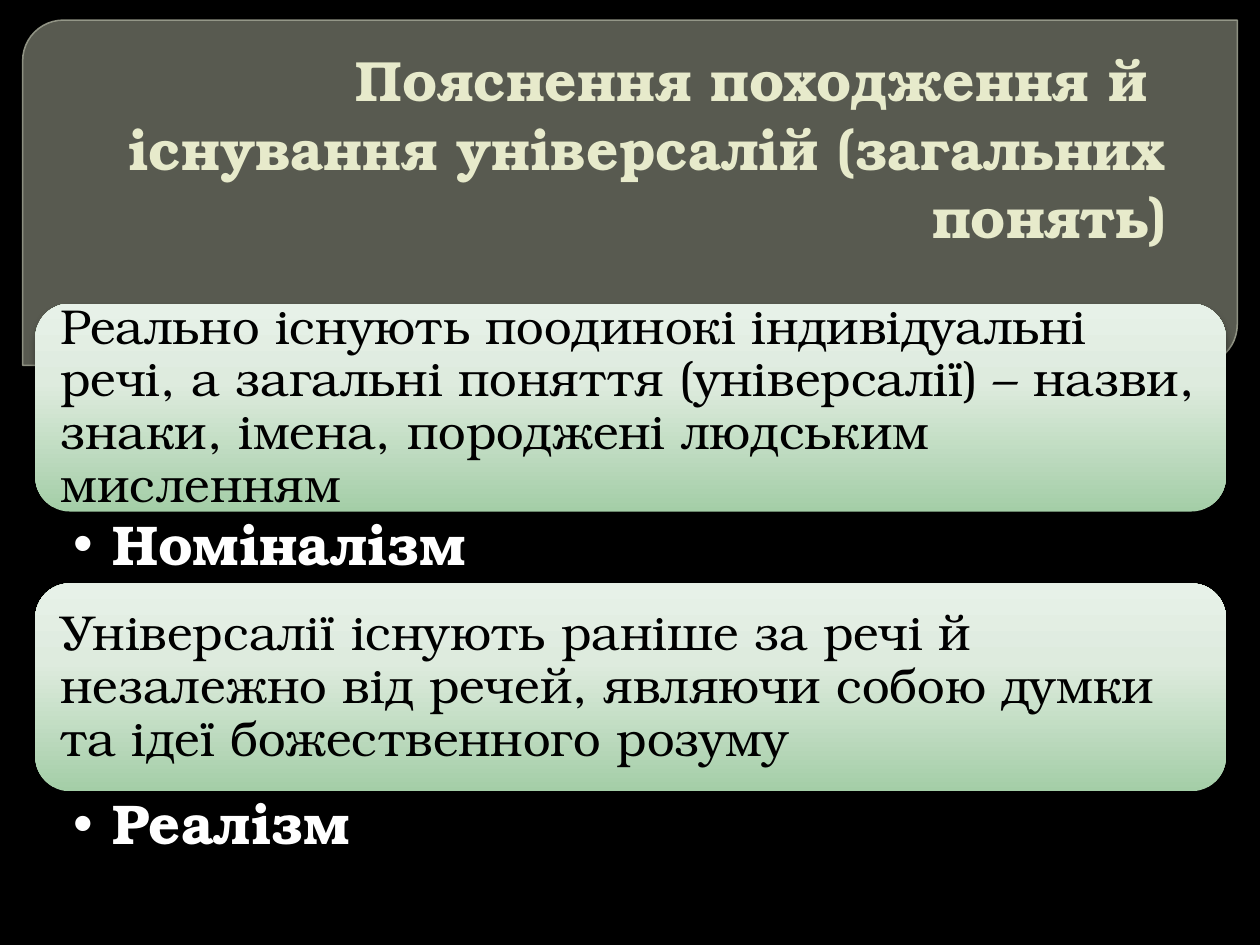
from lxml.etree import SubElement
from pptx import Presentation
from pptx.dml.color import RGBColor
from pptx.enum.shapes import MSO_SHAPE
from pptx.enum.text import MSO_ANCHOR, MSO_AUTO_SIZE, PP_ALIGN
from pptx.oxml import parse_xml
from pptx.oxml.ns import nsdecls, qn
from pptx.util import Inches, Pt

THEME = {
    "font": "TeX Gyre Bonum",
    "back": "000000", "panel": "888B7B", "edge": "9DA090",
    "title": "E7EACB", "card": "000000", "term": "FFFFFF",
    "fade": [(0, "A4CEA7"), (62, "DEEBDE"), (100, "E7F1E8")],
    "title_pt": 32.4, "card_pt": 28, "term_pt": 32,
}


def write(shape, text, role, bold=False, align=PP_ALIGN.LEFT,
          anchor=MSO_ANCHOR.TOP, pad=(0.12, 0.12, 0.12, 0.12), space=1.0):
    """Fill a shape with one formatted paragraph; role picks size and colour."""
    frame = shape.text_frame
    frame.word_wrap = True
    frame.auto_size = MSO_AUTO_SIZE.NONE
    frame.vertical_anchor = anchor
    (frame.margin_left, frame.margin_top,
     frame.margin_right, frame.margin_bottom) = map(Inches, pad)
    para = frame.paragraphs[0]
    para.alignment = align
    para.line_spacing = space
    para.space_before = Pt(0)
    run = para.add_run()
    run.text = text
    run.font.name = THEME["font"]
    run.font.size = Pt(THEME[role + "_pt"])
    run.font.bold = bold
    run.font.color.rgb = RGBColor.from_string(THEME[role])
    return para


def place(shape, left, top, width, height):
    shape.left, shape.top = Inches(left), Inches(top)
    shape.width, shape.height = Inches(width), Inches(height)


deck = Presentation()
deck.slide_width, deck.slide_height = Inches(10), Inches(7.5)
slide = deck.slides.add_slide(deck.slide_layouts[3])
slide.background.fill.solid()
slide.background.fill.fore_color.rgb = RGBColor.from_string(THEME["back"])

# Header panel, behind everything else
panel = slide.shapes.add_shape(
    MSO_SHAPE.ROUND_2_DIAG_RECTANGLE,
    Inches(0.18), Inches(0.16), Inches(9.64), Inches(2.74))
panel.adjustments[0], panel.adjustments[1] = 0.118, 0
panel.shadow.inherit = False
panel.fill.solid()
panel.fill.fore_color.rgb = RGBColor.from_string(THEME["panel"])
panel.line.color.rgb = RGBColor.from_string(THEME["edge"])
panel.line.width = Pt(0.87)
tones = panel._element.spPr.iter(qn("a:srgbClr"))
for tone, alpha in zip(list(tones), (65, 88)):
    SubElement(tone, qn("a:alpha"), val=str(alpha * 1000))
slide.shapes._spTree.insert(2, panel._element)

# Title
title = slide.shapes.title
place(title, 0.51, 0.42, 9, 2.15)
write(title, "Пояснення походження й  існування універсалій (загальних понять)",
      "title", bold=True, align=PP_ALIGN.RIGHT, anchor=MSO_ANCHOR.BOTTOM,
      pad=(0.05, 0.05, 0.25, 0.59))

# Cards, each with its term below
VIEWS = [
    ("Реально існують поодинокі індивідуальні речі, а загальні поняття "
     "(універсалії) – назви, знаки, імена, породжені людським мисленням",
     "Номіналізм"),
    ("Універсалії існують раніше за речі й незалежно від речей, являючи "
     "собою думки та ідеї божественного розуму", "Реалізм"),
]
LEFT, TOP, WIDE, CARD, TERM = 0.28, 2.41, 9.45, 1.65, 0.57
stops = "".join(
    f'<a:gs pos="{pos * 1000}"><a:srgbClr val="{tone}"/></a:gs>'
    for pos, tone in THEME["fade"])

for row, (text, term) in enumerate(VIEWS):
    top = TOP + row * (CARD + TERM)
    card = slide.shapes.add_shape(
        MSO_SHAPE.ROUNDED_RECTANGLE,
        Inches(LEFT), Inches(top), Inches(WIDE), Inches(CARD))
    card.line.fill.background()
    props = card._element.spPr
    # Three-stop fade and soft shadow
    props.insert(2, parse_xml(
        f'<a:gradFill {nsdecls("a")}><a:gsLst>{stops}</a:gsLst>'
        '<a:lin ang="16200000" scaled="0"/></a:gradFill>'))
    props.append(parse_xml(
        f'<a:effectLst {nsdecls("a")}><a:outerShdw blurRad="{Pt(4)}" '
        f'dist="{Pt(3)}" dir="5400000" rotWithShape="0">'
        f'<a:srgbClr val="{THEME["back"]}"><a:alpha val="43000"/></a:srgbClr>'
        '</a:outerShdw></a:effectLst>'))
    write(card, text, "card", anchor=MSO_ANCHOR.MIDDLE, space=0.9)

    # Bulleted term
    body = slide.placeholders[row + 1]
    place(body, LEFT, top + CARD, WIDE, TERM)
    para = write(body, term, "term", bold=True,
                 pad=(0.3, 0.04, 0.25, 0.04), space=0.9)
    marks = para._p.get_or_add_pPr()
    marks.set("marL", str(Inches(0.31)))
    marks.set("indent", str(Inches(-0.31)))
    SubElement(marks, qn("a:buChar"), char="•")

deck.save("out.pptx")
